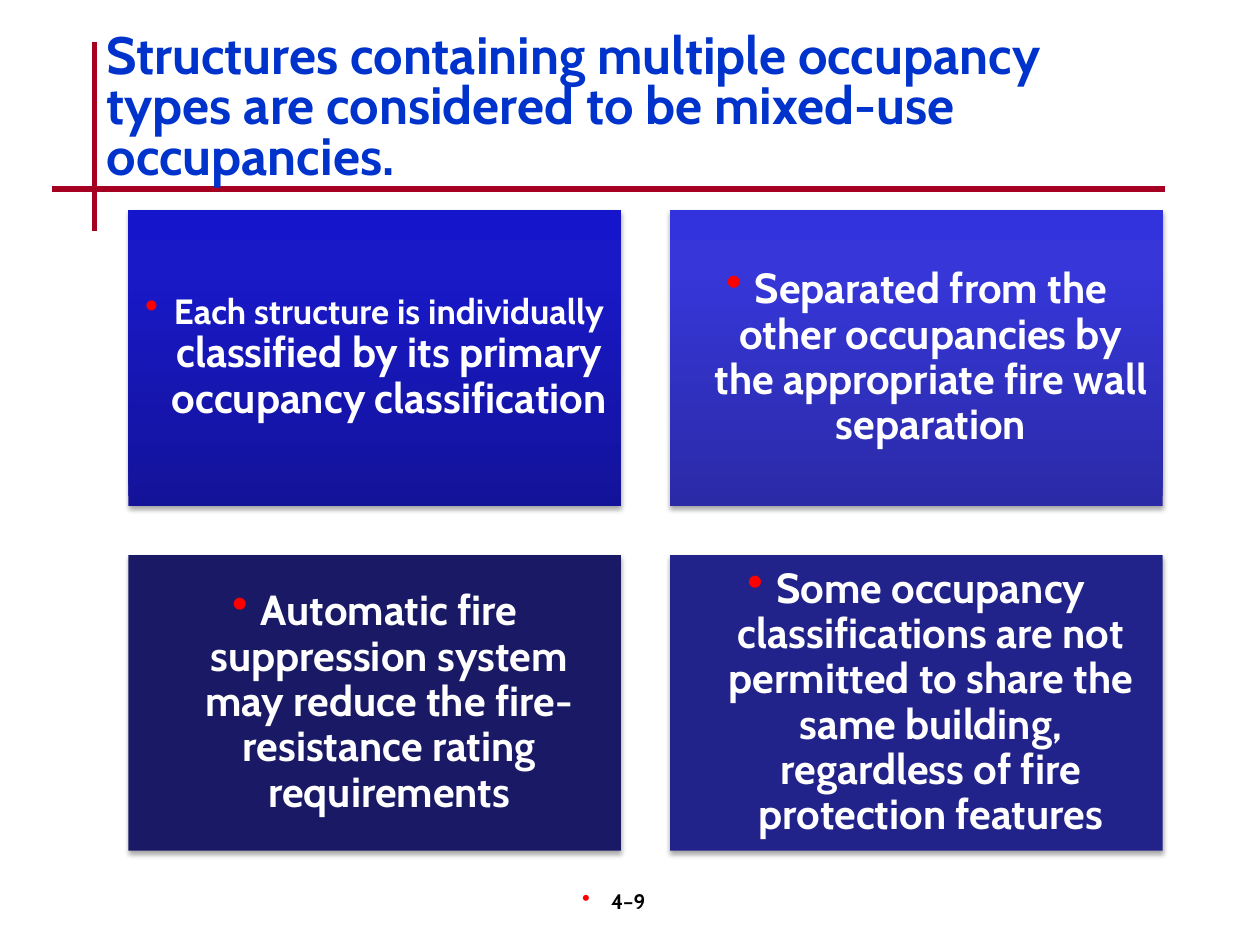
from lxml import etree
from pptx import Presentation
from pptx.dml.color import RGBColor
from pptx.enum.shapes import MSO_CONNECTOR, MSO_SHAPE
from pptx.enum.text import MSO_ANCHOR, PP_ALIGN
from pptx.oxml import parse_xml
from pptx.oxml.ns import nsdecls, qn
from pptx.util import Cm, Pt

FONT = "Cabin"
WHITE = RGBColor(0xFF, 0xFF, 0xFF)
BLACK = RGBColor(0x00, 0x00, 0x00)
TITLE_BLUE = RGBColor(0x00, 0x33, 0xCC)
RULE_RED = RGBColor(0xA5, 0x00, 0x21)
BULLET_RED = RGBColor(0xFF, 0x00, 0x00)
ROYAL = (RGBColor(0x13, 0x13, 0x9A), RGBColor(0x19, 0x19, 0xC8), RGBColor(0x15, 0x15, 0xCC))
VIOLET = (RGBColor(0x2A, 0x2A, 0xA7), RGBColor(0x36, 0x36, 0xD9), RGBColor(0x33, 0x33, 0xDD))
NAVY = (RGBColor(0x19, 0x19, 0x66),)
INDIGO = (RGBColor(0x22, 0x22, 0x8B),)

CARDS = [
    (ROYAL, 0.2, [("Each structure is individually ", 20),
                  ("classified by its primary occupancy classification", 24)]),
    (VIOLET, 0.25, [("Separated from the other occupancies by the appropriate "
                     "fire wall separation", 24)]),
    (NAVY, 0.25, [("Automatic fire suppression system may reduce the "
                   "fire-resistance rating requirements", 24)]),
    (INDIGO, 0.25, [("Some occupancy classifications are not permitted to share "
                     "the same building, regardless of fire protection features", 24)]),
]


def style_font(para, size, color):
    font = para.font
    font.name, font.size, font.bold = FONT, Pt(size), True
    font.color.rgb = color


def add_bullet(para):
    properties = para._p.get_or_add_pPr()
    properties.set("marL", str(Cm(0.58)))
    properties.set("indent", str(Cm(-0.58)))
    for xml in (
        f'<a:buClr {nsdecls("a")}><a:srgbClr val="{BULLET_RED}"/></a:buClr>',
        f'<a:buSzPct {nsdecls("a")} val="110000"/>',
        f'<a:buChar {nsdecls("a")} char="•"/>',
    ):
        properties.append(parse_xml(xml))


def fill_card(card, colors):
    if len(colors) == 1:
        card.fill.solid()
        card.fill.fore_color.rgb = colors[0]
        return
    stops = "".join(
        f'<a:gs pos="{place * 1000}"><a:srgbClr val="{color}"/></a:gs>'
        for place, color in zip((0, 80, 100), colors)
    )
    card._element.spPr.find(qn("a:prstGeom")).addnext(parse_xml(
        f'<a:gradFill {nsdecls("a")} rotWithShape="1"><a:gsLst>{stops}</a:gsLst>'
        '<a:lin ang="16200000" scaled="0"/></a:gradFill>'
    ))


def add_shadow(card):
    card.shadow.inherit = False
    card._element.spPr.find(qn("a:effectLst")).append(parse_xml(
        f'<a:outerShdw {nsdecls("a")} blurRad="{Pt(3.1)}" dist="{Pt(1.8)}" '
        'dir="5400000" rotWithShape="0"><a:srgbClr val="000000">'
        '<a:alpha val="35000"/></a:srgbClr></a:outerShdw>'
    ))


def add_rule(page, x1, y1, x2, y2):
    rule = page.shapes.add_connector(MSO_CONNECTOR.STRAIGHT, x1, y1, x2, y2)
    rule.line.color.rgb = RULE_RED
    rule.line.width = Pt(3)
    etree.SubElement(rule._element.spPr, qn("a:effectLst"))


def add_title(page, left, top, width, height):
    add_rule(page, left, top + Cm(0.28), left, top + Cm(4.09))
    add_rule(page, left - Cm(0.85), top + Cm(3.25), left + width, top + Cm(3.25))
    box = page.shapes.add_textbox(left, top, width, height)
    box.text_frame.word_wrap = True
    para = box.text_frame.paragraphs[0]
    para.text = ("Structures containing multiple occupancy types are considered "
                 "to be mixed-use occupancies.")
    para.line_spacing = 0.8
    style_font(para, 30, TITLE_BLUE)


def add_card(page, left, top, width, height, colors, inset, spans):
    card = page.shapes.add_shape(MSO_SHAPE.RECTANGLE, left, top, width, height)
    fill_card(card, colors)
    card.line.fill.background()
    add_shadow(card)
    frame = card.text_frame
    frame.word_wrap = True
    frame.vertical_anchor = MSO_ANCHOR.MIDDLE
    frame.margin_left = frame.margin_right = Cm(inset)
    frame.margin_top = frame.margin_bottom = Cm(inset)
    para = frame.paragraphs[0]
    add_bullet(para)
    para.alignment = PP_ALIGN.CENTER
    para.line_spacing = 0.9
    style_font(para, 24, WHITE)
    for text, size in spans:
        span = para.add_run()
        span.text = text
        span.font.size = Pt(size)


def add_cards(page, left, top, width, height):
    gap = Cm(0.99)
    card_width, card_height = (width - gap) // 2, (height - gap) // 2
    for index, (colors, inset, spans) in enumerate(CARDS):
        row, column = divmod(index, 2)
        add_card(page, left + column * (card_width + gap), top + row * (card_height + gap),
                 card_width, card_height, colors, inset, spans)


def add_page_number(page, left, top, width, height):
    box = page.shapes.add_textbox(left, top, width, height)
    box.text_frame.word_wrap = True
    box.text_frame.margin_right = Cm(0.7)
    para = box.text_frame.paragraphs[0]
    para.text = "4–9"
    add_bullet(para)
    para.alignment = PP_ALIGN.CENTER
    style_font(para, 12, BLACK)


def main():
    deck = Presentation()
    deck.slide_width, deck.slide_height = Cm(25.4), Cm(19.05)
    page = deck.slides.add_slide(deck.slide_layouts[6])
    add_title(page, Cm(1.9), Cm(0.56), Cm(21.59), Cm(2.54))
    add_cards(page, Cm(2.59), Cm(4.24), Cm(20.85), Cm(12.91))
    add_page_number(page, Cm(9.96), Cm(17.78), Cm(5.28), Cm(1.27))
    deck.save("out.pptx")


if __name__ == "__main__":
    main()
